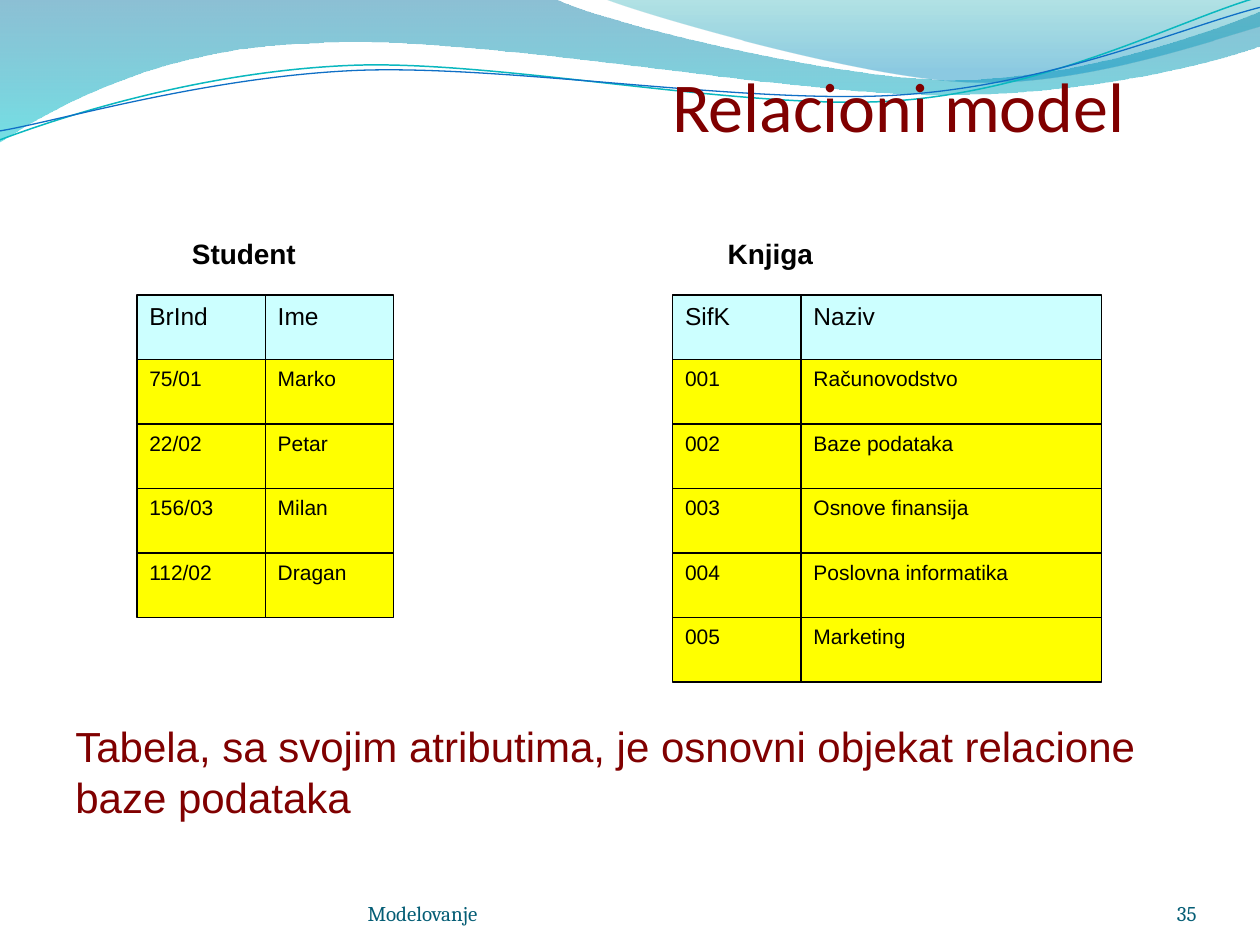
import pptx
import pptx.dml.color
import pptx.enum.shapes
import pptx.enum.text
import pptx.oxml
import pptx.oxml.ns
import pptx.util

Cm = pptx.util.Cm
Pt = pptx.util.Pt
RGBColor = pptx.dml.color.RGBColor
Anchor = pptx.enum.text.MSO_ANCHOR
Align = pptx.enum.text.PP_ALIGN
RECTANGLE = pptx.enum.shapes.MSO_SHAPE.RECTANGLE
qn = pptx.oxml.ns.qn
nsdecls = pptx.oxml.ns.nsdecls

MAROON = RGBColor(0x80, 0x00, 0x00)
BLACK = RGBColor(0x00, 0x00, 0x00)
FOOTER_TEAL = RGBColor(0x04, 0x5D, 0x75)
HEADER_CYAN = RGBColor(0xCC, 0xFF, 0xFF)
ROW_YELLOW = RGBColor(0xFF, 0xFF, 0x00)
WAVE_BLUE = RGBColor(0x00, 0x74, 0xA1)
WAVE_CYAN = RGBColor(0x00, 0xC6, 0xCF)
WAVE_TEAL = RGBColor(0x00, 0xA1, 0xA9)
WAVE_SKY = RGBColor(0x00, 0x8B, 0xBF)
LINE_CYAN = RGBColor(0x0A, 0xB8, 0xBF)
LINE_BLUE = RGBColor(0x0F, 0x6F, 0xC6)

# Each outline is a start point, then steps: one point is a straight line,
# three points are a Bezier curve. All in centimetres.
BROAD_WAVE = [
    (0, 0),
    [(11.18, -0.03)],
    [(12.09, 0.43), (16.87, 1.6), (19.25, 1.6)],
    [(21.67, 1.6), (24.33, 0.66), (25.4, 0.23)],
    [(25.43, 0.91)],
    [(24.97, 1.12), (22.1, 1.93), (18.95, 1.91)],
    [(15.8, 1.91), (9.7, 0.71), (6.53, 0.86)],
    [(3.28, 0.91), (1.17, 2.11), (-0.03, 2.87)],
    [(0, 0)],
]
RIGHT_WAVE = [
    (12.17, -0.03),
    [(12.93, 0.28), (17.32, 1.57), (19.53, 1.65)],
    [(21.74, 1.75), (24.41, 0.81), (25.4, 0.53)],
    [(25.4, 0)],
    [(12.17, -0.03)],
]
CYAN_LINE = [
    (0, 2.82),
    [(1.22, 2.36), (4.01, 1.45), (7.04, 1.32)],
    [(10.03, 1.19), (15.06, 2.26), (18.11, 2.03)],
    [(21.16, 1.8), (23.83, 0.38), (25.35, -0.05)],
]
BLUE_LINE = [
    (0, 2.64),
    [(1.19, 2.44), (4.17, 1.55), (7.19, 1.42)],
    [(10.24, 1.3), (15.16, 2.13), (18.21, 1.91)],
    [(21.23, 1.7), (23.9, 0.53), (25.4, 0.15)],
]

STUDENTS = [("BrInd", "Ime"), ("75/01", "Marko"), ("22/02", "Petar"),
            ("156/03", "Milan"), ("112/02", "Dragan")]
BOOKS = [("SifK", "Naziv"), ("001", "Računovodstvo"), ("002", "Baze podataka"),
         ("003", "Osnove finansija"), ("004", "Poslovna informatika"),
         ("005", "Marketing")]


def add_outline(page, left, top, outline, close):
    """Freeform whose three-point steps become Bezier curves."""
    start, *steps = outline
    builder = page.shapes.build_freeform(Cm(left + start[0]), Cm(top + start[1]))
    builder.add_line_segments([(Cm(left + x), Cm(top + y))
                               for step in steps for x, y in step], close=close)
    shape = builder.convert_to_shape()
    shape.shadow.inherit = False
    segments = iter(list(shape.element.iter(qn("a:lnTo"))))
    for step in steps:
        parts = [next(segments) for _ in step]
        if len(parts) == 3:
            curve = pptx.oxml.parse_xml(f'<a:cubicBezTo {nsdecls("a")}/>')
            parts[0].addprevious(curve)
            for part in parts:
                curve.append(part[0])
                part.getparent().remove(part)
    return shape


def add_wave(page, left, top, outline, stops):
    """Filled wave; stops are (position, colour, opacity in percent)."""
    shape = add_outline(page, left, top, outline, close=True)
    shape.line.fill.background()
    shape.fill.gradient()
    shape.fill.gradient_angle = 270
    for stop, (position, colour, _) in zip(shape.fill.gradient_stops, stops):
        stop.position = position
        stop.color.rgb = colour
    for node, (_, _, opacity) in zip(shape.element.iter(qn("a:srgbClr")), stops):
        node.append(pptx.oxml.parse_xml(
            f'<a:alpha {nsdecls("a")} val="{opacity * 1000}"/>'))


def add_wave_header(page, left, top):
    add_wave(page, left, top, BROAD_WAVE, [(0, WAVE_BLUE, 45), (1, WAVE_CYAN, 55)])
    add_wave(page, left, top, RIGHT_WAVE, [(0, WAVE_TEAL, 30), (0.8, WAVE_SKY, 45)])
    for outline, colour, width in ((CYAN_LINE, LINE_CYAN, 0.85),
                                   (BLUE_LINE, LINE_BLUE, 0.75)):
        shape = add_outline(page, left, top, outline, close=False)
        shape.fill.background()
        shape.line.color.rgb = colour
        shape.line.width = Pt(width)


def style_text(frame, text, font, size, colour, bold=False, align=Align.LEFT,
               anchor=Anchor.TOP):
    frame.word_wrap = True
    frame.vertical_anchor = anchor
    frame.text = text
    para = frame.paragraphs[0]
    para.alignment = align
    para.font.name = font
    para.font.size = Pt(size)
    para.font.bold = bold
    para.font.color.rgb = colour


def add_text(page, left, top, width, height, text, font, size, colour,
             top_margin=None, **style):
    """Text box; a given top margin leaves the other sides without any."""
    box = page.shapes.add_textbox(Cm(left), Cm(top), Cm(width), Cm(height))
    frame = box.text_frame
    if top_margin is not None:
        frame.margin_left = frame.margin_right = frame.margin_bottom = 0
        frame.margin_top = Cm(top_margin)
    style_text(frame, text, font, size, colour, **style)


def add_cell(page, left, top, width, height, text, size, fill):
    cell = page.shapes.add_shape(RECTANGLE, Cm(left), Cm(top), Cm(width), Cm(height))
    cell.shadow.inherit = False
    cell.fill.solid()
    cell.fill.fore_color.rgb = fill
    cell.line.color.rgb = BLACK
    cell.line.width = Pt(0.75)
    style_text(cell.text_frame, text, "Arial", size, BLACK)


def add_relation(page, left, top, name, records, widths, row_height=1.3):
    """Caption with the grid of a relation under it."""
    for row, record in enumerate(records):
        size, fill = (12, ROW_YELLOW) if row else (14, HEADER_CYAN)
        for column, value in enumerate(record):
            add_cell(page, left + sum(widths[:column]), top + (row + 1) * row_height,
                     widths[column], row_height, value, size, fill)
    add_text(page, left + 0.86, top, 3.45, row_height, name, "Arial", 16, BLACK,
             bold=True)


def add_footer(page, left, top, height=1.02):
    add_text(page, left, top, 9.32, height, "Modelovanje", "Cambria", 12,
             FOOTER_TEAL, anchor=Anchor.BOTTOM, top_margin=0)
    add_text(page, left + 14.6, top, 2.11, height, "35", "Cambria", 12,
             FOOTER_TEAL, anchor=Anchor.BOTTOM, top_margin=0, align=Align.RIGHT)


def main():
    deck = pptx.Presentation()
    deck.slide_width, deck.slide_height = Cm(25.4), Cm(19.05)
    page = deck.slides.add_slide(deck.slide_layouts[6])

    add_wave_header(page, 0, 0)
    # Title
    add_text(page, 13.55, 0, 11.85, 2.96, "Relacioni model", "Calibri", 40, MAROON,
             anchor=Anchor.BOTTOM, top_margin=0.13)
    # Relations
    add_relation(page, 2.76, 4.65, "Student", STUDENTS, (2.59, 2.59))
    add_relation(page, 13.56, 4.65, "Knjiga", BOOKS, (2.59, 6.05))
    # Conclusion
    add_text(page, 1.27, 14.4, 23.5, 2.29,
             "Tabela, sa svojim atributima, je osnovni objekat relacione baze podataka",
             "Arial", 24, MAROON, anchor=Anchor.MIDDLE)
    add_footer(page, 7.41, 17.65)

    deck.save("out.pptx")


if __name__ == "__main__":
    main()
